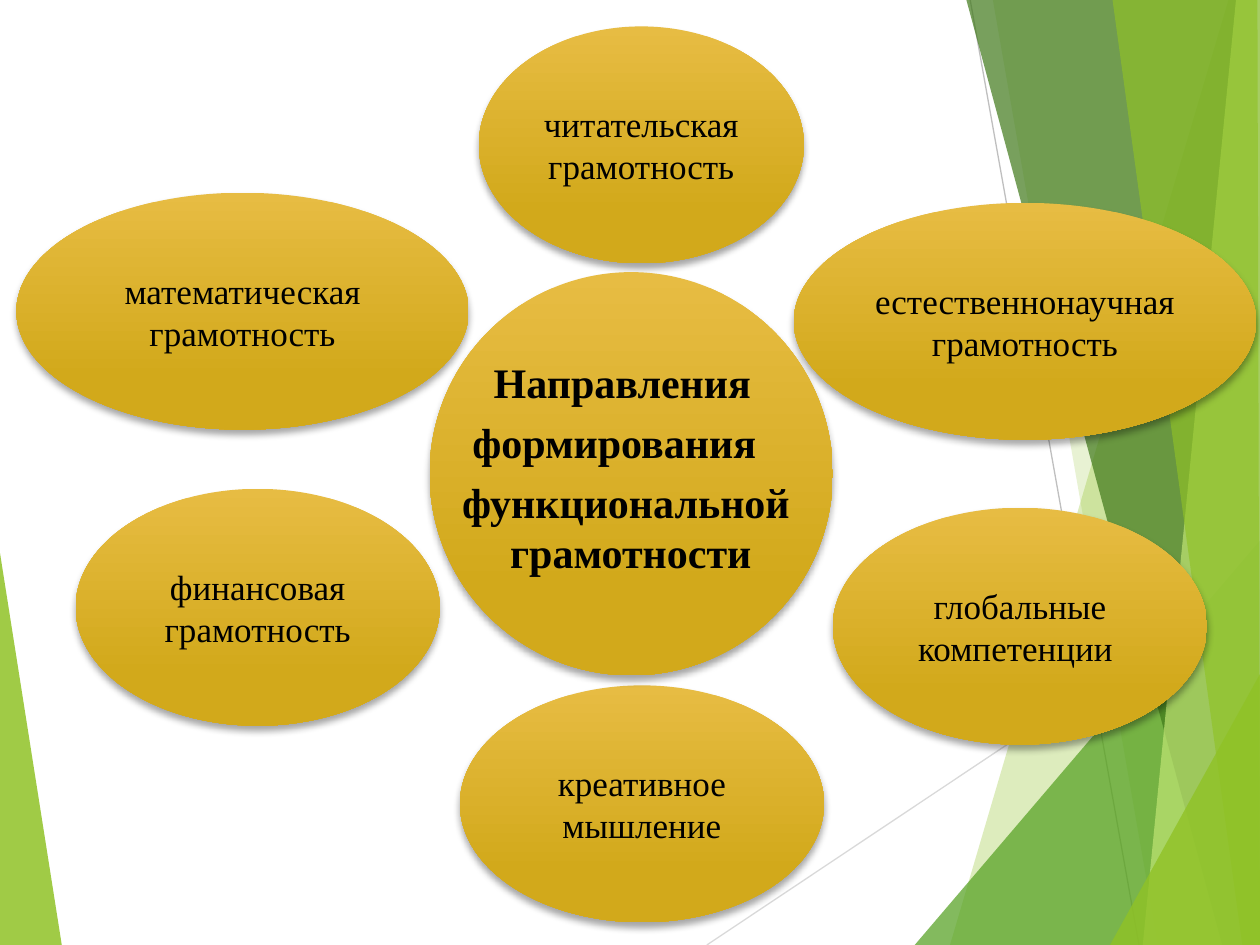
from typing import NamedTuple

from lxml.etree import SubElement as Sub
from pptx import Presentation
from pptx.dml.color import RGBColor
from pptx.enum.shapes import MSO_CONNECTOR as Link, MSO_SHAPE as Form
from pptx.enum.text import MSO_ANCHOR as Anchor, PP_ALIGN as Align
from pptx.oxml.ns import qn
from pptx.util import Inches, Pt

WIDE, HIGH = Inches(10), Inches(7.5)
FONT = "Times New Roman"
OVAL_H = 25.07


class Facet(NamedTuple):
    """Background polygon: corners in percent of the slide, opacity in percent."""
    color: str
    alpha: int
    pts: list[tuple[float, float]]


class Ray(NamedTuple):
    color: str
    start: tuple[float, float]
    end: tuple[float, float]


class Oval(NamedTuple):
    """Ellipse in percent of the slide's width and height."""
    text: str
    left: float
    top: float
    wide: float
    high: float = OVAL_H


class Line(NamedTuple):
    """Title line with its left margin and first-line indent in inches."""
    text: str
    margin: float
    indent: float = 0


LEAF = Facet("90C226", 85, [(0, 58.53), (4.9, 100), (0, 100)])
RAYS = [
    Ray("D9D9D9", (56.1, 100), (100, 60.93)),
    Ray("BFBFBF", (77, 0), (90.4, 100)),
]
FACETS = [
    Facet("90C226", 30, [(97.5, 0), (75.4, 100), (100, 100), (100, 0)]),
    Facet("90C226", 20, [(78.8, 0), (91.9, 100), (100, 100), (100, 0)]),
    Facet("54A021", 72, [(72.6, 100), (100, 57.2), (100, 100)]),
    Facet("3F7819", 70, [(76.7, 0), (97, 100), (100, 100), (100, 0)]),
    Facet("C0E474", 70, [(98.1, 0), (90.7, 100), (100, 100), (100, 0)]),
    Facet("90C226", 65, [(88.3, 0), (98.6, 100), (100, 100), (99.8, 0)]),
    Facet("90C226", 80, [(88.1, 100), (100, 71.33), (100, 100)]),
]
OVALS = [
    Oval("математическая грамотность", 1.3, 20.4, 35.9),
    Oval("читательская грамотность", 38, 2.8, 25.8),
    Oval("финансовая грамотность", 6, 51.73, 28.9),
    Oval("креативное мышление", 36.5, 72.53, 28.9),
    Oval("глобальные компетенции ", 66.1, 53.73, 29.7),
    Oval("естественнонаучная грамотность", 63, 21.47, 36.7),
    Oval("", 34.1, 28.8, 32, 42.67),
]
TITLE = [
    Line("Направления", 0.25),
    Line("формирования", 0.08),
    Line("функциональной грамотности", 0.38, -0.38),
]


def tint(code: str) -> RGBColor:
    return RGBColor.from_string(code)


def col(share: float) -> int:
    return round(WIDE * share / 100)


def row(share: float) -> int:
    return round(HIGH * share / 100)


def write(para, text: str, *, size: float, bold: bool = False,
          align=Align.LEFT, before: float = 0) -> None:
    para.alignment = align
    para.space_before = Pt(before)
    run = para.add_run()
    run.text = text
    font = run.font
    font.name, font.size, font.bold = FONT, Pt(size), bold
    font.color.rgb = tint("000000")


def draw_facet(shapes, facet: Facet) -> None:
    pts = [(col(x), row(y)) for x, y in facet.pts]
    pen = shapes.build_freeform(*pts[0])
    pen.add_line_segments(pts[1:], close=True)
    shape = pen.convert_to_shape()
    shape.shadow.inherit = False
    shape.line.fill.background()
    shape.fill.solid()
    shape.fill.fore_color.rgb = tint(facet.color)
    color = shape.fill._xPr.find(qn("a:solidFill"))[0]
    Sub(color, qn("a:alpha"), val=str(facet.alpha * 1000))


def draw_ray(shapes, ray: Ray) -> None:
    (x1, y1), (x2, y2) = ray.start, ray.end
    line = shapes.add_connector(Link.STRAIGHT, col(x1), row(y1), col(x2), row(y2))
    line.line.color.rgb = tint(ray.color)
    line.line.width = Pt(0.75)
    Sub(line._element.spPr, qn("a:effectLst"))


def cast_shadow(shape) -> None:
    """Soft shadow falling straight down."""
    shape.shadow.inherit = False
    effects = shape._element.spPr.find(qn("a:effectLst"))
    outer = Sub(effects, qn("a:outerShdw"), blurRad=str(Pt(4)), dist=str(Pt(3)),
                dir="5400000", rotWithShape="0")
    color = Sub(outer, qn("a:srgbClr"), val="000000")
    Sub(color, qn("a:alpha"), val="35000")


def draw_oval(shapes, oval: Oval) -> None:
    shape = shapes.add_shape(Form.OVAL, col(oval.left), row(oval.top),
                             col(oval.wide), row(oval.high))
    shape.line.fill.background()
    fill = shape.fill
    fill.gradient()
    fill.gradient_angle = 270
    for stop, (code, place) in zip(fill.gradient_stops,
                                   [("E7BC43", 0), ("D2A91B", 0.78)]):
        stop.color.rgb = tint(code)
        stop.position = place
    cast_shadow(shape)
    if oval.text:
        frame = shape.text_frame
        frame.word_wrap = True
        frame.vertical_anchor = Anchor.MIDDLE
        write(frame.paragraphs[0], oval.text, size=20, align=Align.CENTER)


def draw_title(shapes, lines: list[Line]) -> None:
    box = shapes.add_textbox(col(35.7), row(37.07), col(28.9), row(OVAL_H))
    frame = box.text_frame
    frame.word_wrap = True
    for i, line in enumerate(lines):
        para = frame.add_paragraph() if i else frame.paragraphs[0]
        write(para, line.text, size=24, bold=True, before=5.5)
        props = para._p.get_or_add_pPr()
        props.set("marL", str(Inches(line.margin)))
        props.set("indent", str(Inches(line.indent)))


def main() -> None:
    deck = Presentation()
    deck.slide_width, deck.slide_height = WIDE, HIGH
    shapes = deck.slides.add_slide(deck.slide_layouts[6]).shapes
    draw_facet(shapes, LEAF)
    for ray in RAYS:
        draw_ray(shapes, ray)
    for facet in FACETS:
        draw_facet(shapes, facet)
    for oval in OVALS:
        draw_oval(shapes, oval)
    draw_title(shapes, TITLE)
    deck.save("out.pptx")


if __name__ == "__main__":
    main()
